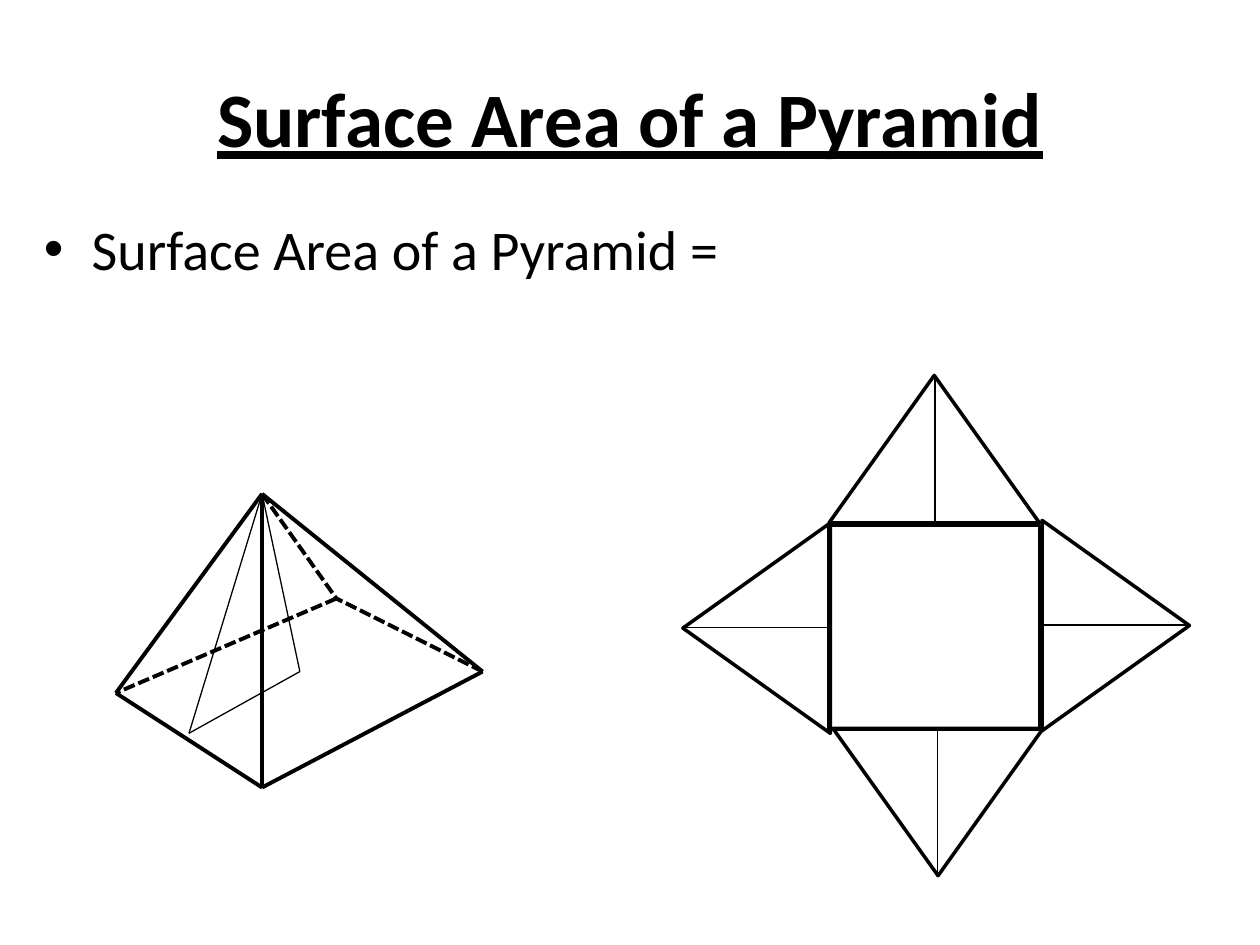
from typing import NamedTuple

from lxml import etree
from pptx import Presentation
from pptx.dml.color import RGBColor
from pptx.enum.dml import MSO_LINE
from pptx.enum.shapes import MSO_CONNECTOR, MSO_SHAPE
from pptx.enum.text import MSO_ANCHOR, PP_ALIGN
from pptx.oxml.ns import qn
from pptx.util import Pt

EMU_PER_PX = 9144
BLACK = RGBColor(0, 0, 0)
STRAIGHT = MSO_CONNECTOR.STRAIGHT
RECTANGLE = MSO_SHAPE.RECTANGLE
TRIANGLE = MSO_SHAPE.ISOSCELES_TRIANGLE
DASHED = MSO_LINE.SQUARE_DOT
CENTER, LEFT = PP_ALIGN.CENTER, PP_ALIGN.LEFT
MIDDLE, TOP = MSO_ANCHOR.MIDDLE, MSO_ANCHOR.TOP

EDGE_PT, NET_PT, HEIGHT_PT = 2.25, 2, 0.75
FACE_BASE, FACE_HEIGHT = 167, 117


class Point(NamedTuple):
    x: int
    y: int


class Segment(NamedTuple):
    start: Point
    end: Point
    weight: float
    dashed: bool = False


class Face(NamedTuple):
    left: int
    top: int
    rotation: int


def px(length: int) -> int:
    return length * EMU_PER_PX


def add_text(slide, box: tuple, text: str, align, anchor, font_format: dict):
    frame = slide.shapes.add_textbox(*map(px, box)).text_frame
    frame.word_wrap = True
    frame.vertical_anchor = anchor
    paragraph = frame.paragraphs[0]
    paragraph.alignment = align
    run = paragraph.add_run()
    run.text = text
    run.font.color.rgb = BLACK
    for attribute, value in font_format.items():
        setattr(run.font, attribute, value)
    return paragraph


def add_bullet(paragraph, indent: int) -> None:
    properties = paragraph._p.get_or_add_pPr()
    properties.set("marL", str(px(indent)))
    properties.set("indent", str(-px(indent)))
    etree.SubElement(properties, qn("a:buFont")).set("typeface", "Arial")
    etree.SubElement(properties, qn("a:buChar")).set("char", "•")


def draw_segment(slide, segment: Segment) -> None:
    connector = slide.shapes.add_connector(
        STRAIGHT, *map(px, segment.start), *map(px, segment.end))
    connector.line.color.rgb = BLACK
    connector.line.width = Pt(segment.weight)
    if segment.dashed:
        connector.line.dash_style = DASHED
    etree.SubElement(connector._element.spPr, qn("a:effectLst"))


def draw_outline(slide, preset, box: tuple, rotation: int = 0) -> None:
    outline = slide.shapes.add_shape(preset, *map(px, box))
    outline.rotation = rotation
    outline.shadow.inherit = False
    outline.fill.background()
    outline.line.color.rgb = BLACK
    outline.line.width = Pt(NET_PT)


def main() -> None:
    presentation = Presentation()
    presentation.slide_width, presentation.slide_height = px(1000), px(750)
    slide = presentation.slides.add_slide(presentation.slide_layouts[6])

    add_text(slide, (50, 30, 900, 125), "Surface Area of a Pyramid", CENTER, MIDDLE,
             {"name": "Calibri", "size": Pt(44), "bold": True, "underline": True})
    formula = add_text(slide, (25, 165, 900, 495), "Surface Area of a Pyramid =", LEFT, TOP,
                       {"name": "Calibri", "size": Pt(32)})
    add_bullet(formula, 38)

    apex = Point(208, 392)
    left, front, right, back = Point(92, 550), Point(208, 625), Point(383, 533), Point(267, 475)
    base = (left, front, right, back)
    for corner, following in zip(base, base[1:] + base[:1]):
        hidden = back in (corner, following)
        draw_segment(slide, Segment(corner, following, EDGE_PT, hidden))
    for corner in base:
        draw_segment(slide, Segment(apex, corner, EDGE_PT, corner == back))

    draw_outline(slide, RECTANGLE, (658, 417, FACE_BASE, 162))
    faces = (Face(658, 298, 0), Face(802, 438, 90), Face(517, 440, 270), Face(661, 578, 180))
    for face in faces:
        draw_outline(slide, TRIANGLE, (face.left, face.top, FACE_BASE, FACE_HEIGHT), face.rotation)

    base_middle, foot = Point(238, 533), Point(150, 582)
    heights = (
        (Point(742, 298), Point(742, 415)),
        (Point(744, 695), Point(744, 578)),
        (Point(542, 498), Point(658, 498)),
        (Point(944, 496), Point(827, 496)),
        (apex, base_middle),
        (base_middle, foot),
        (apex, foot),
    )
    for start, end in heights:
        draw_segment(slide, Segment(start, end, HEIGHT_PT))

    presentation.save("out.pptx")


if __name__ == "__main__":
    main()
